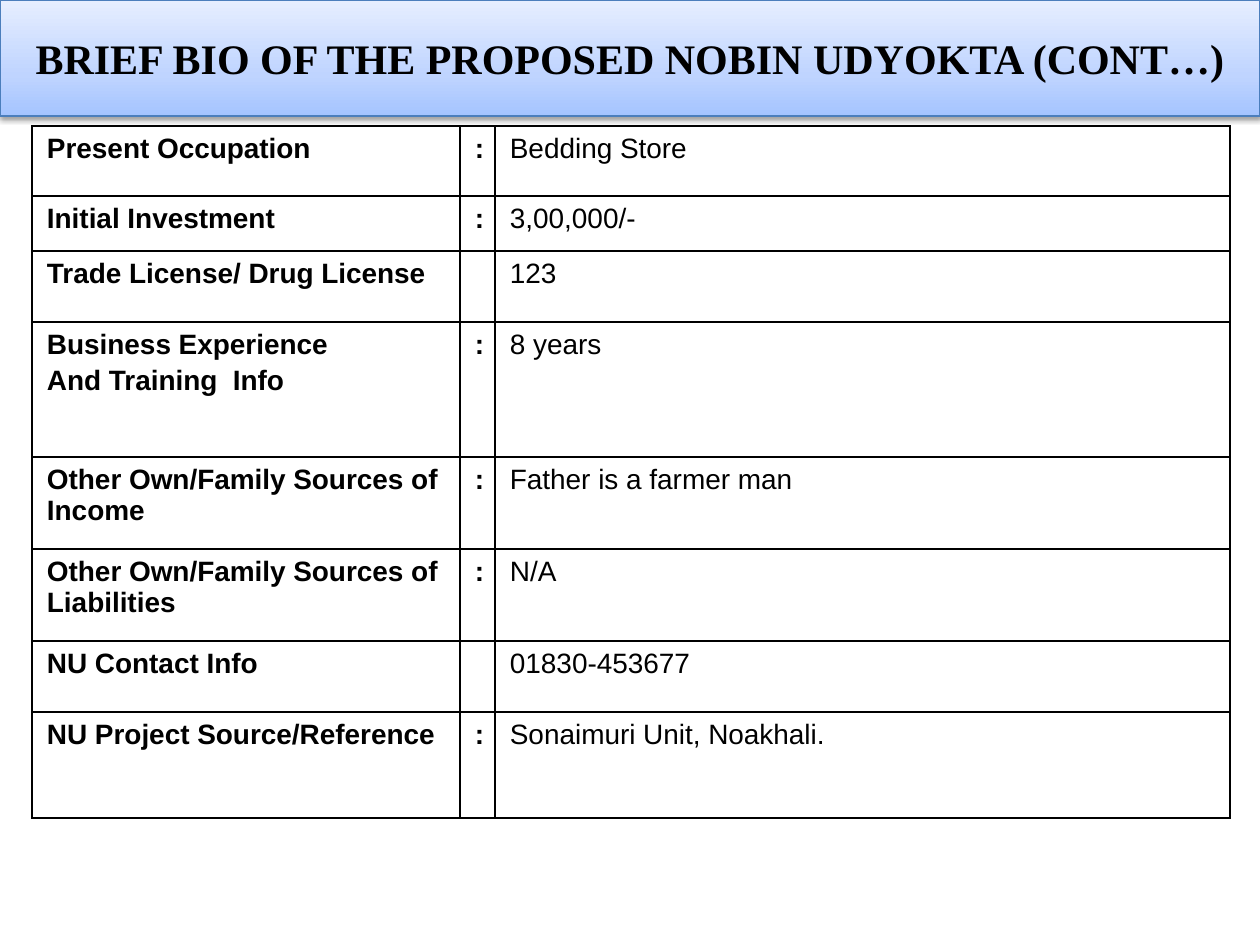
"""Builds a slide with a gradient title band and a table of biographical facts."""
import copy

import lxml.etree
import pptx
import pptx.dml.color
import pptx.enum.text
import pptx.oxml
import pptx.oxml.ns
import pptx.util

BLACK = pptx.dml.color.RGBColor(0x00, 0x00, 0x00)
BAND_LINE = pptx.dml.color.RGBColor(0x4B, 0x7E, 0xBC)
BAND_STOPS = [
    (0, pptx.dml.color.RGBColor(0xA4, 0xC4, 0xFF)),
    (0.35, pptx.dml.color.RGBColor(0xBF, 0xD4, 0xFF)),
    (1, pptx.dml.color.RGBColor(0xE6, 0xEE, 0xFF)),
]
PX = pptx.util.Inches(1) // 126

HEADING = "BRIEF BIO OF THE PROPOSED NOBIN UDYOKTA (CONT…)"
FACTS = [
    (70, "Present Occupation", ":", "Bedding Store"),
    (55, "Initial Investment", ":", "3,00,000/-"),
    (71, "Trade License/ Drug License", "", "123"),
    (135, "Business Experience\nAnd Training  Info", ":", "8 years"),
    (92, "Other Own/Family Sources of Income", ":", "Father is a farmer man"),
    (92, "Other Own/Family Sources of Liabilities", ":", "N/A"),
    (71, "NU Contact Info", "", "01830-453677"),
    (106, "NU Project Source/Reference", ":", "Sonaimuri Unit, Noakhali."),
]
FACT_COLUMNS = [428, 35, 735]


class BioSlide:
    """Holds the style and the current slide."""

    heading_font = {"name": "Times New Roman", "size": pptx.util.Pt(24), "bold": True}
    label_font = {"name": "Arial", "size": pptx.util.Pt(16), "bold": True}
    value_font = {**label_font, "bold": False}
    cell_format = {
        "margin_left": 15 * PX,
        "margin_right": 15 * PX,
        "margin_top": 7 * PX,
        "margin_bottom": 7 * PX,
        "vertical_anchor": pptx.enum.text.MSO_ANCHOR.TOP,
    }
    heading_format = {
        "word_wrap": True,
        "auto_size": pptx.enum.text.MSO_AUTO_SIZE.NONE,
        "vertical_anchor": pptx.enum.text.MSO_ANCHOR.MIDDLE,
    }

    def __init__(self, deck):
        """Add a title-only slide to the deck."""
        self.slide = deck.slides.add_slide(deck.slide_layouts[5])

    def apply(self, target, values):
        """Set each named attribute on the target."""
        for name, value in values.items():
            setattr(target, name, value)

    def style(self, paragraph, font):
        """Give a paragraph and its runs a black font."""
        for part in (paragraph, *paragraph.runs):
            self.apply(part.font, font)
            part.font.color.rgb = BLACK

    def band(self, text, left, top, width, height):
        """Turn the title placeholder into a shaded band."""
        title = self.slide.shapes.title
        bounds = {"left": left, "top": top, "width": width, "height": height}
        self.apply(title, {name: px * PX for name, px in bounds.items()})
        title.fill.gradient()
        stops = title._element.spPr.find(".//" + pptx.oxml.ns.qn("a:gsLst"))
        stops.append(copy.deepcopy(stops[0]))
        for stop, (position, color) in zip(title.fill.gradient_stops, BAND_STOPS):
            stop.position = position
            stop.color.rgb = color
        title.fill.gradient_angle = 90
        title.line.color.rgb = BAND_LINE
        title.line.width = pptx.util.Pt(0.75)
        title._element.spPr.append(pptx.oxml.parse_xml(
            f'<a:effectLst {pptx.oxml.ns.nsdecls("a")}>'
            '<a:outerShdw blurRad="40000" dist="20000" dir="5400000" rotWithShape="0">'
            '<a:srgbClr val="000000"><a:alpha val="38000"/></a:srgbClr>'
            '</a:outerShdw></a:effectLst>'))
        self.apply(title.text_frame, self.heading_format)
        title.text_frame.text = text
        heading = title.text_frame.paragraphs[0]
        heading.alignment = pptx.enum.text.PP_ALIGN.CENTER
        self.style(heading, self.heading_font)

    def border(self, cell):
        """Draw a thin black line on every side of a cell."""
        properties = cell._tc.get_or_add_tcPr()
        for side in ("lnL", "lnR", "lnT", "lnB"):
            edge = lxml.etree.SubElement(
                properties, pptx.oxml.ns.qn(f"a:{side}"), w=str(pptx.util.Pt(1)))
            paint = lxml.etree.SubElement(edge, pptx.oxml.ns.qn("a:solidFill"))
            lxml.etree.SubElement(paint, pptx.oxml.ns.qn("a:srgbClr"), val=str(BLACK))

    def fill_cell(self, cell, text, font):
        """Write and format one cell."""
        cell.text = text
        self.apply(cell, self.cell_format)
        self.border(cell)
        cell.fill.background()
        for index, paragraph in enumerate(cell.text_frame.paragraphs):
            if index:
                paragraph.space_before = pptx.util.Pt(3)
            self.style(paragraph, font)

    def facts(self, rows, columns, left, top):
        """Add the table of labels, colons and values."""
        height = sum(row[0] for row in rows)
        table = self.slide.shapes.add_table(
            len(rows), len(columns), left * PX, top * PX,
            sum(columns) * PX, height * PX).table
        self.apply(table, {"first_row": False, "horz_banding": False})
        for column, width in zip(table.columns, columns):
            column.width = width * PX
        fonts = (self.label_font, self.label_font, self.value_font)
        for row, (row_height, *texts) in zip(table.rows, rows):
            row.height = row_height * PX
            for cell, text, font in zip(row.cells, texts, fonts):
                self.fill_cell(cell, text, font)


def main():
    """Build and save the deck."""
    deck = pptx.Presentation()
    deck.slide_width = 1260 * PX
    deck.slide_height = 945 * PX
    bio = BioSlide(deck)
    bio.band(HEADING, 0, 0, 1260, 116)
    bio.facts(FACTS, FACT_COLUMNS, 32, 126)
    deck.save("out.pptx")


if __name__ == "__main__":
    main()
